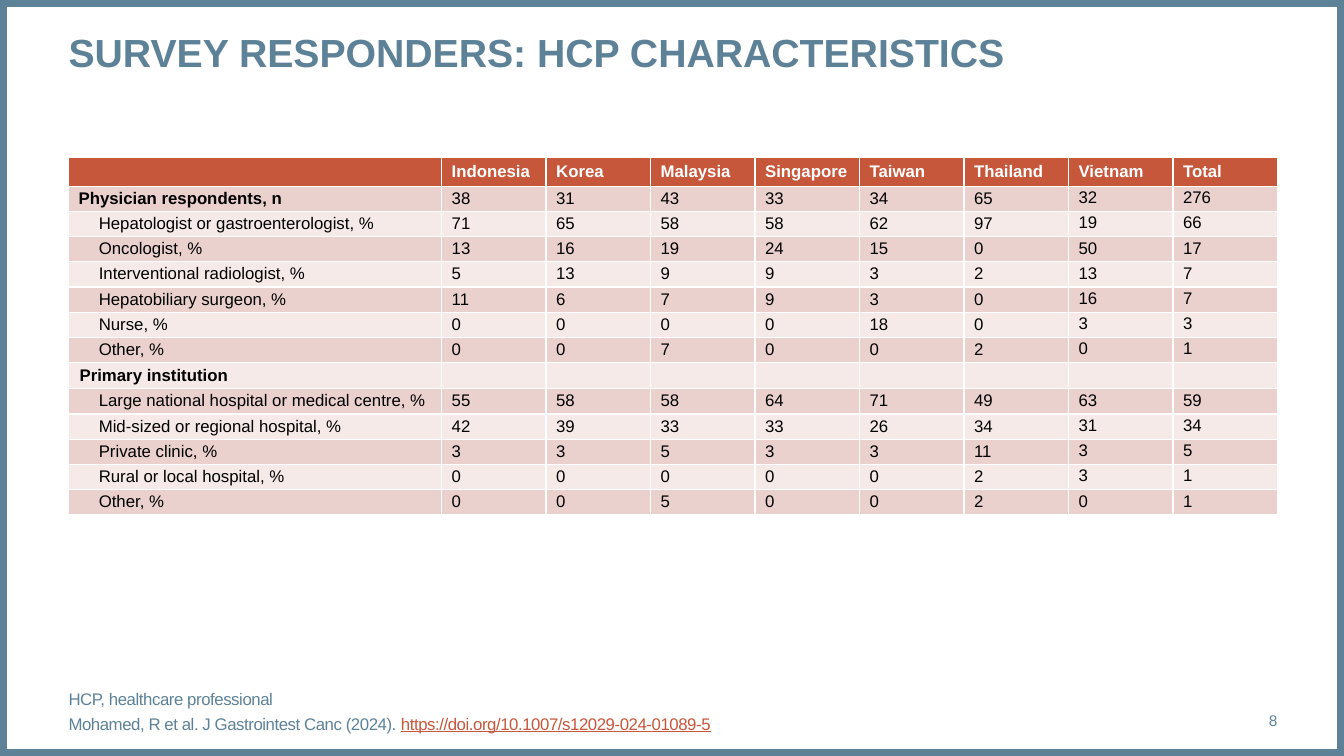
from lxml.etree import SubElement
from pptx import Presentation
from pptx.dml.color import RGBColor
from pptx.enum.shapes import MSO_SHAPE
from pptx.enum.text import MSO_ANCHOR, MSO_AUTO_SIZE, PP_ALIGN
from pptx.oxml.ns import qn
from pptx.util import Inches, Pt

# Content
TITLE = "SURVEY RESPONDERS: HCP CHARACTERISTICS"
HEADER = ("", "Indonesia", "Korea", "Malaysia", "Singapore", "Taiwan",
          "Thailand", "Vietnam", "Total")
# Label, indent in inches, bold, values
ROWS = [
    ("Physician respondents, n", 0, True, (38, 31, 43, 33, 34, 65, 32, 276)),
    ("Hepatologist or gastroenterologist, %", 0.2, False, (71, 65, 58, 58, 62, 97, 19, 66)),
    ("Oncologist, %", 0.2, False, (13, 16, 19, 24, 15, 0, 50, 17)),
    ("Interventional radiologist, %", 0.2, False, (5, 13, 9, 9, 3, 2, 13, 7)),
    ("Hepatobiliary surgeon, %", 0.2, False, (11, 6, 7, 9, 3, 0, 16, 7)),
    ("Nurse, %", 0.2, False, (0, 0, 0, 0, 18, 0, 3, 3)),
    ("Other, %", 0.2, False, (0, 0, 7, 0, 0, 2, 0, 1)),
    ("Primary institution", 0.01, True, ("",) * 8),
    ("Large national hospital or medical centre, %", 0.2, False, (55, 58, 58, 64, 71, 49, 63, 59)),
    ("Mid-sized or regional hospital, %", 0.2, False, (42, 39, 33, 33, 26, 34, 31, 34)),
    ("Private clinic, %", 0.2, False, (3, 3, 5, 3, 3, 11, 3, 5)),
    ("Rural or local hospital, %", 0.2, False, (0, 0, 0, 0, 0, 2, 3, 1)),
    ("Other, %", 0.2, False, (0, 0, 5, 0, 0, 2, 0, 1)),
]
ABBREVIATION = "HCP, healthcare professional"
CITATION = "Mohamed, R et al. J Gastrointest Canc (2024). "
DOI = "https://doi.org/10.1007/s12029-024-01089-5"
PAGE = "8"

# Style and grid
BLUE, RUST, WHITE, BLACK = "5D8298", "C6573B", "FFFFFF", "000000"
BANDS = ("EAD1CE", "F5EAE8")
W, H = 13.33, 7.5
LEFT, CONTENT_W, LABEL_W = 0.68, 11.99, 3.7
VALUE_W = (CONTENT_W - LABEL_W) / (len(HEADER) - 1)
HEAD_H, SECTION_H, ROW_H = 0.28, 0.26, 0.25
TOP_ANCHORED = ("Vietnam", "Total")


def rgb(color):
    return RGBColor.from_string(color)


def style(font, size, color, bold=False):
    font.name, font.size, font.bold = "Arial", Pt(size), bold
    font.color.rgb = rgb(color)


def place(sp, x, y, w, h):
    sp.left, sp.top, sp.width, sp.height = map(Inches, (x, y, w, h))


def frame(sp, anchor):
    tf = sp.text_frame
    tf.margin_left = tf.margin_right = tf.margin_top = tf.margin_bottom = 0
    tf.auto_size, tf.word_wrap = MSO_AUTO_SIZE.NONE, True
    tf.vertical_anchor = anchor
    return tf


def fill_cell(cell, text, color, font_color, bold):
    cell.fill.solid()
    cell.fill.fore_color.rgb = rgb(color)
    p = cell.text_frame.paragraphs[0]
    p.text = str(text)
    style(p.font, 12, font_color, bold)
    if text == "":
        SubElement(p._p, qn("a:endParaRPr")).set("sz", "1200")
    return p


prs = Presentation()
prs.slide_width, prs.slide_height = Inches(W), Inches(H)
s = prs.slides.add_slide(prs.slide_layouts[5])

# Title
title = s.shapes.title
place(title, LEFT, 0.28, CONTENT_W, 0.94)
p = frame(title, MSO_ANCHOR.TOP).paragraphs[0]
p.text, p.alignment = TITLE, PP_ALIGN.LEFT
style(p.font, 28, BLUE, True)

# Slide border
border = s.shapes.add_shape(MSO_SHAPE.RECTANGLE, 0, 0, Inches(W), Inches(H))
border.shadow.inherit = False
border.fill.background()
border.line.color.rgb, border.line.width = rgb(BLUE), Pt(10)

# Table
heights = [HEAD_H] + [ROW_H if values[0] != "" else SECTION_H for *_, values in ROWS]
table = s.shapes.add_table(len(heights), len(HEADER), Inches(LEFT), Inches(1.56),
                           Inches(CONTENT_W), Inches(sum(heights))).table
for c, col in enumerate(table.columns):
    col.width = Inches(VALUE_W if c else LABEL_W)
for row, height in zip(table.rows, heights):
    row.height = Inches(height)

for c, text in enumerate(HEADER):
    fill_cell(table.cell(0, c), text, RUST, WHITE, True)

for i, (label, indent, bold, values) in enumerate(ROWS):
    for c, text in enumerate((label, *values)):
        cell = table.cell(i + 1, c)
        p = fill_cell(cell, text, BANDS[i % 2], BLACK, bold and c == 0)
        p.line_spacing = 0.9
        cell.margin_top, cell.margin_bottom = Inches(0.04), Inches(0.03)
        if HEADER[c] not in TOP_ANCHORED:
            cell.vertical_anchor = MSO_ANCHOR.MIDDLE
        if c == 0 and indent:
            p._p.get_or_add_pPr().set("marL", str(Inches(indent)))

# Footnotes
notes = s.shapes.add_textbox(0, 0, 0, 0)
place(notes, LEFT, 6.84, 11.13, 0.43)
tf = frame(notes, MSO_ANCHOR.MIDDLE)
for i, parts in enumerate([(ABBREVIATION,), (CITATION, DOI)]):
    p = tf.add_paragraph() if i else tf.paragraphs[0]
    if i:
        p.space_before = Pt(3)
    for text in parts:
        r = p.add_run()
        r.text = text
        style(r.font, 12, RUST if text == DOI else BLUE)
        r.font.underline = text == DOI
        r._r.get_or_add_rPr().set("spc", "-30")

# Slide number
number = s.shapes.add_textbox(0, 0, 0, 0)
place(number, 11.81, 6.95, 0.86, 0.4)
p = frame(number, MSO_ANCHOR.MIDDLE).paragraphs[0]
p.text, p.alignment = PAGE, PP_ALIGN.RIGHT
style(p.font, 11, BLUE)

prs.save("out.pptx")
